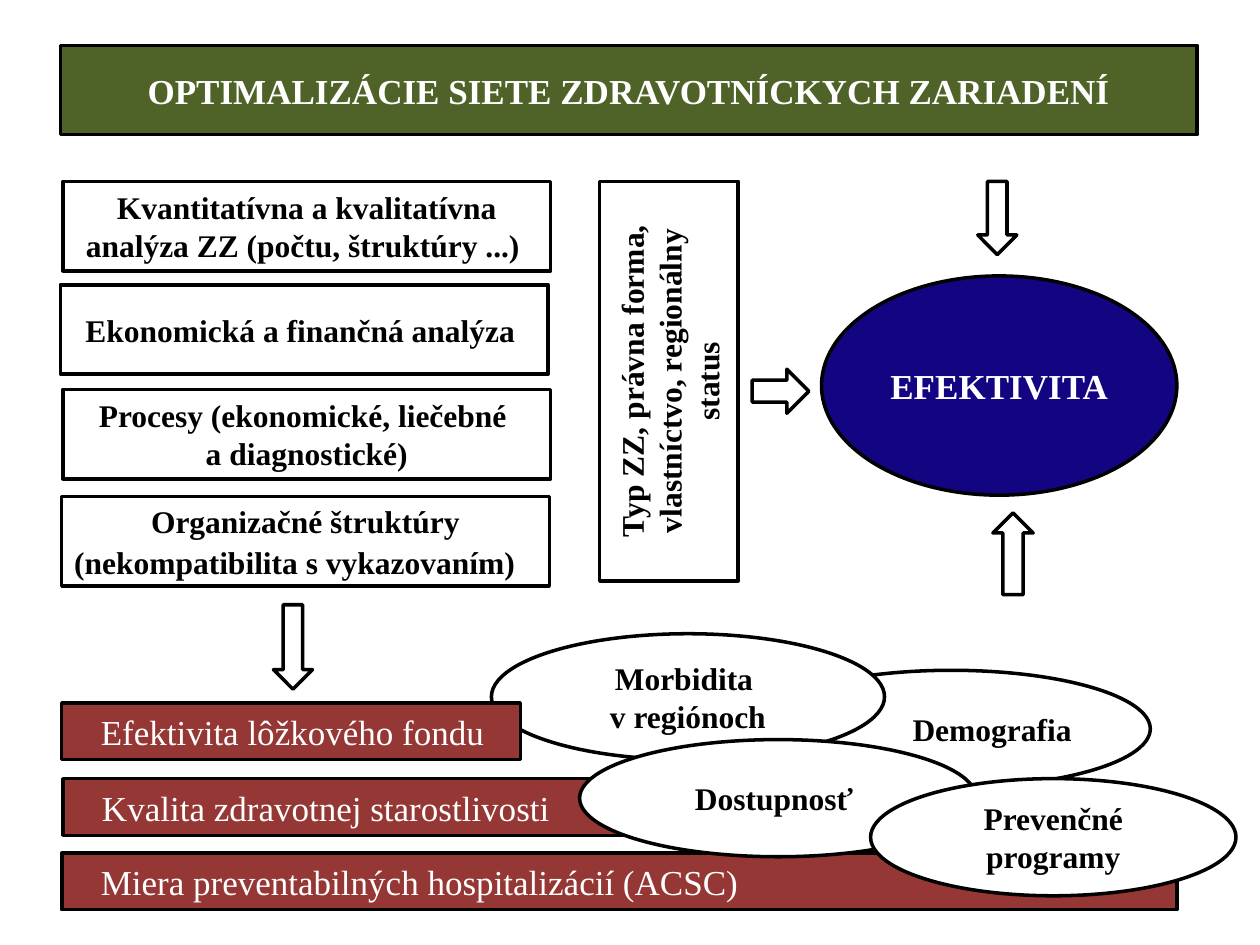
from pptx import Presentation
from pptx.dml.color import RGBColor
from pptx.enum.shapes import MSO_SHAPE as Shape
from pptx.enum.text import MSO_ANCHOR as Anchor, MSO_AUTO_SIZE as AutoSize, PP_ALIGN as Align
from pptx.util import Inches, Pt

FONT = "Times New Roman"
COLORS = {
    "black": "000000",
    "white": "FFFFFF",
    "green": "4F6228",
    "red": "953735",
    "navy": "130482",
}


def color(name):
    return RGBColor.from_string(COLORS[name])


def style_shape(shape, fill):
    if fill:
        shape.fill.solid()
        shape.fill.fore_color.rgb = color(fill)
    else:
        shape.fill.background()
    shape.line.color.rgb = color("black")
    shape.line.width = Pt(2)


def write(shape, lines, size=18, ink="black", bold=True, align=Align.CENTER):
    frame = shape.text_frame
    frame.word_wrap = True
    frame.auto_size = AutoSize.NONE
    frame.vertical_anchor = Anchor.MIDDLE
    frame.text = "\n".join(lines)
    for para in frame.paragraphs:
        para.alignment = align
        para.font.name = FONT
        para.font.size = Pt(size)
        para.font.bold = bold
        para.font.color.rgb = color(ink)


def add_shape(page, kind, place, fill=None):
    shape = page.shapes.add_shape(kind, *map(Inches, place))
    shape.shadow.inherit = False
    style_shape(shape, fill)
    return shape


def add_title(page, text):
    title = page.shapes.title
    title.left, title.top, title.width, title.height = map(Inches, (0.48, 0.36, 9.02, 0.71))
    style_shape(title, "green")
    write(title, [text], 20, "white")


def add_analysis_box(page, left, top, lines):
    box = add_shape(page, Shape.RECTANGLE, (left, top, 3.87, 0.71), "white")
    write(box, lines)
    return box


def add_bar(page, left, top, width, text):
    bar = add_shape(page, Shape.RECTANGLE, (left, top, width, 0.45), "red")
    write(bar, [text], 20, "white", False, Align.LEFT)
    bar.text_frame.margin_left = Inches(0.31)


def add_oval(page, place, lines, align=Align.CENTER):
    oval = add_shape(page, Shape.OVAL, place, "white")
    write(oval, lines, align=align)


def add_status_column(page):
    column = add_shape(page, Shape.RECTANGLE, (4.76, 1.44, 1.1, 3.17))
    write(column, ["Typ ZZ, právna forma, vlastníctvo, regionálny status"])
    column.text_frame._txBody.bodyPr.set("vert", "vert270")


def main():
    deck = Presentation()
    deck.slide_width, deck.slide_height = Inches(10), Inches(7.5)
    page = deck.slides.add_slide(deck.slide_layouts[5])
    add_title(page, "OPTIMALIZÁCIE SIETE ZDRAVOTNÍCKYCH ZARIADENÍ")

    add_analysis_box(page, 0.5, 1.44, ["Kvantitatívna a kvalitatívna analýza ZZ (počtu, štruktúry ...) "])
    add_analysis_box(page, 0.48, 2.26, ["Ekonomická a finančná analýza "])
    add_analysis_box(page, 0.5, 3.09, ["Procesy (ekonomické, liečebné ", "a diagnostické)"])
    structures = add_analysis_box(
        page, 0.49, 3.94, ["Organizačné štruktúry", "(nekompatibilita s vykazovaním)"])
    detail = structures.text_frame.paragraphs[1]
    detail.alignment = Align.LEFT
    detail.space_before = Pt(2)

    add_oval(page, (5.97, 5.32, 3.16, 0.93), ["Demografia "], Align.RIGHT)
    add_oval(page, (3.9, 5.03, 3.12, 1), ["Morbidita ", "v regiónoch"])

    add_bar(page, 0.49, 5.58, 3.64, "Efektivita lôžkového fondu")
    add_bar(page, 0.5, 6.18, 4.5, "Kvalita zdravotnej starostlivosti")
    add_bar(page, 0.49, 6.77, 8.85, "Miera preventabilných hospitalizácií (ACSC)")

    add_status_column(page)
    add_oval(page, (4.6, 5.87, 3.15, 0.93), ["Dostupnosť "])
    add_oval(page, (6.91, 6.18, 2.9, 0.93), ["Prevenčné programy"])

    goal = add_shape(page, Shape.OVAL, (6.52, 2.19, 2.82, 1.74), "navy")
    write(goal, ["EFEKTIVITA"], 20, "white")

    for kind, place in (
        (Shape.DOWN_ARROW, (2.17, 4.8, 0.31, 0.67)),
        (Shape.RIGHT_ARROW, (5.97, 2.93, 0.45, 0.35)),
        (Shape.DOWN_ARROW, (7.76, 1.44, 0.31, 0.58)),
        (Shape.UP_ARROW, (7.88, 4.07, 0.32, 0.65)),
    ):
        add_shape(page, kind, place)

    deck.save("out.pptx")


if __name__ == "__main__":
    main()
